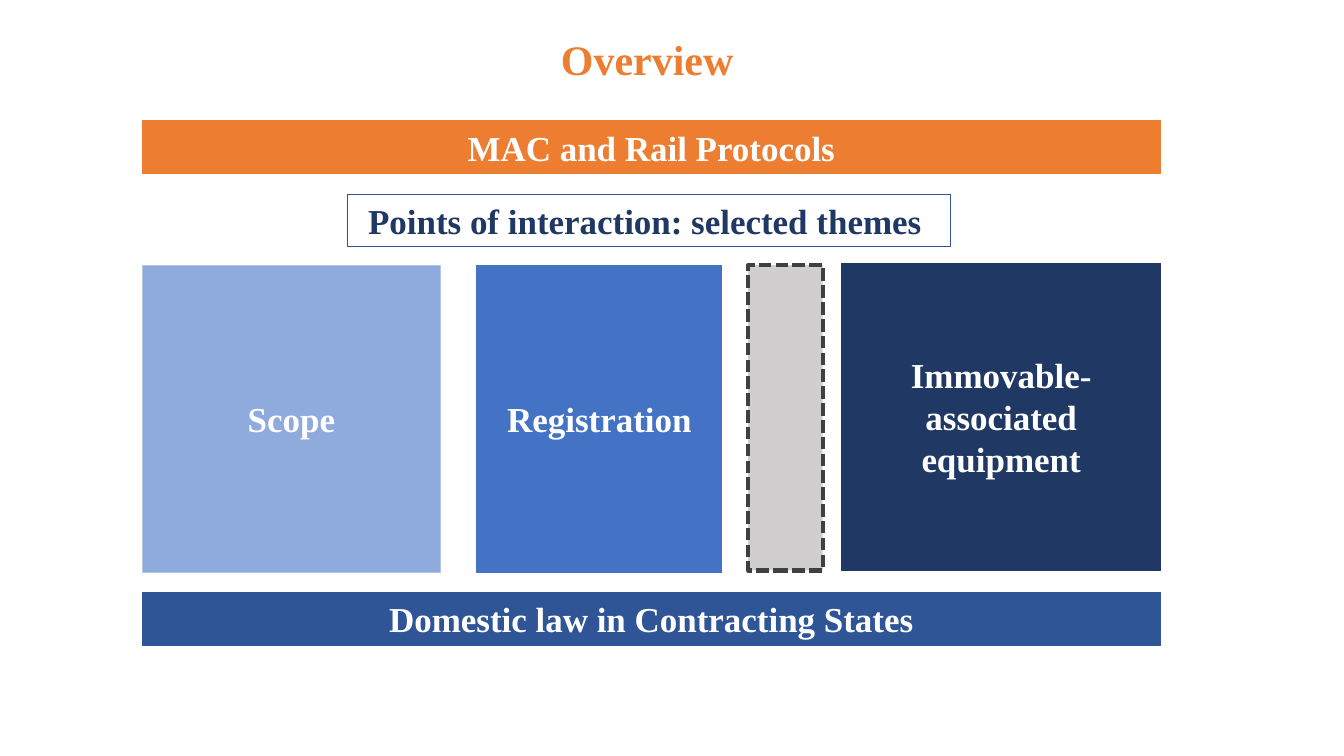
from pptx import Presentation
from pptx import util as u
from pptx.dml.color import RGBColor
from pptx.enum import dml, shapes, text

THEME = {
    "font": "Times New Roman", "title_size": 30, "label_size": 25,
    "orange": "ED7D31", "white": "FFFFFF", "navy": "203864", "deep": "2F5597",
    "blue": "4472C4", "light": "8FAADC", "pale": "B4C7E7",
    "grey": "D0CECE", "charcoal": "404040",
}
LEFT, WIDTH = 1.41, 10.1
BAR = 0.52
COLUMN_TOP, COLUMN_HEIGHT = 2.63, 3.05


def colour(name):
    return RGBColor.from_string(THEME[name])


def write(host, wording, size, ink):
    frame = host.text_frame
    frame.text = wording
    layout = {"word_wrap": True, "auto_size": text.MSO_AUTO_SIZE.NONE,
              "vertical_anchor": text.MSO_ANCHOR.MIDDLE,
              "margin_left": u.Inches(0.1), "margin_right": u.Inches(0.1),
              "margin_top": u.Inches(0.05), "margin_bottom": u.Inches(0.05)}
    for key, value in layout.items():
        setattr(frame, key, value)
    line = frame.paragraphs[0]
    line.alignment = text.PP_ALIGN.CENTER
    font = line.runs[0].font
    for key, value in {"name": THEME["font"], "size": u.Pt(THEME[size]), "bold": True}.items():
        setattr(font, key, value)
    font.color.rgb = colour(ink)


deck = Presentation()
deck.slide_width, deck.slide_height = u.Inches(13.33), u.Inches(7.5)
slide = deck.slides.add_slide(deck.slide_layouts[5])

title = slide.shapes.title
for side, length in {"left": 0.88, "top": 0.28, "width": 11.08, "height": 0.61}.items():
    setattr(title, side, u.Inches(length))
write(title, "Overview", "title_size", "orange")

# wording, left, top, width, height, fill, outline, ink
blocks = [
    ("MAC and Rail Protocols", LEFT, 1.2, WIDTH, BAR, "orange", "orange", "white"),
    ("Domestic law in Contracting States", LEFT, 5.88, WIDTH, BAR, "deep", "deep", "white"),
    ("Scope", LEFT, COLUMN_TOP, 2.96, COLUMN_HEIGHT, "light", "pale", "white"),
    ("Registration", 4.73, COLUMN_TOP, 2.43, COLUMN_HEIGHT, "blue", "blue", "white"),
    ("Immovable-associated equipment", LEFT + WIDTH - 3.16, 2.61, 3.16, COLUMN_HEIGHT,
     "navy", "navy", "white"),
    ("", 7.42, COLUMN_TOP, 0.74, 3.03, "grey", "charcoal", None),
    ("Points of interaction: selected themes", 3.45, 1.93, 5.98, BAR, None, "deep", "navy"),
]
for wording, left, top, width, height, fill, outline, ink in blocks:
    block = slide.shapes.add_shape(
        shapes.MSO_SHAPE.RECTANGLE, *map(u.Inches, (left, top, width, height)))
    block.shadow.inherit = False
    if fill:
        block.fill.solid()
        block.fill.fore_color.rgb = colour(fill)
    else:
        block.fill.background()
    block.line.color.rgb = colour(outline)
    block.line.width = u.Pt(0.75)
    if wording:
        write(block, wording, "label_size", ink)
    else:
        block.line.width = u.Pt(3)
        block.line.dash_style = dml.MSO_LINE.SQUARE_DOT

# The themes heading sits slightly left of its frame's centre
themes_heading = block
themes_heading.text_frame.margin_right = u.Inches(0.19)

deck.save("out.pptx")
